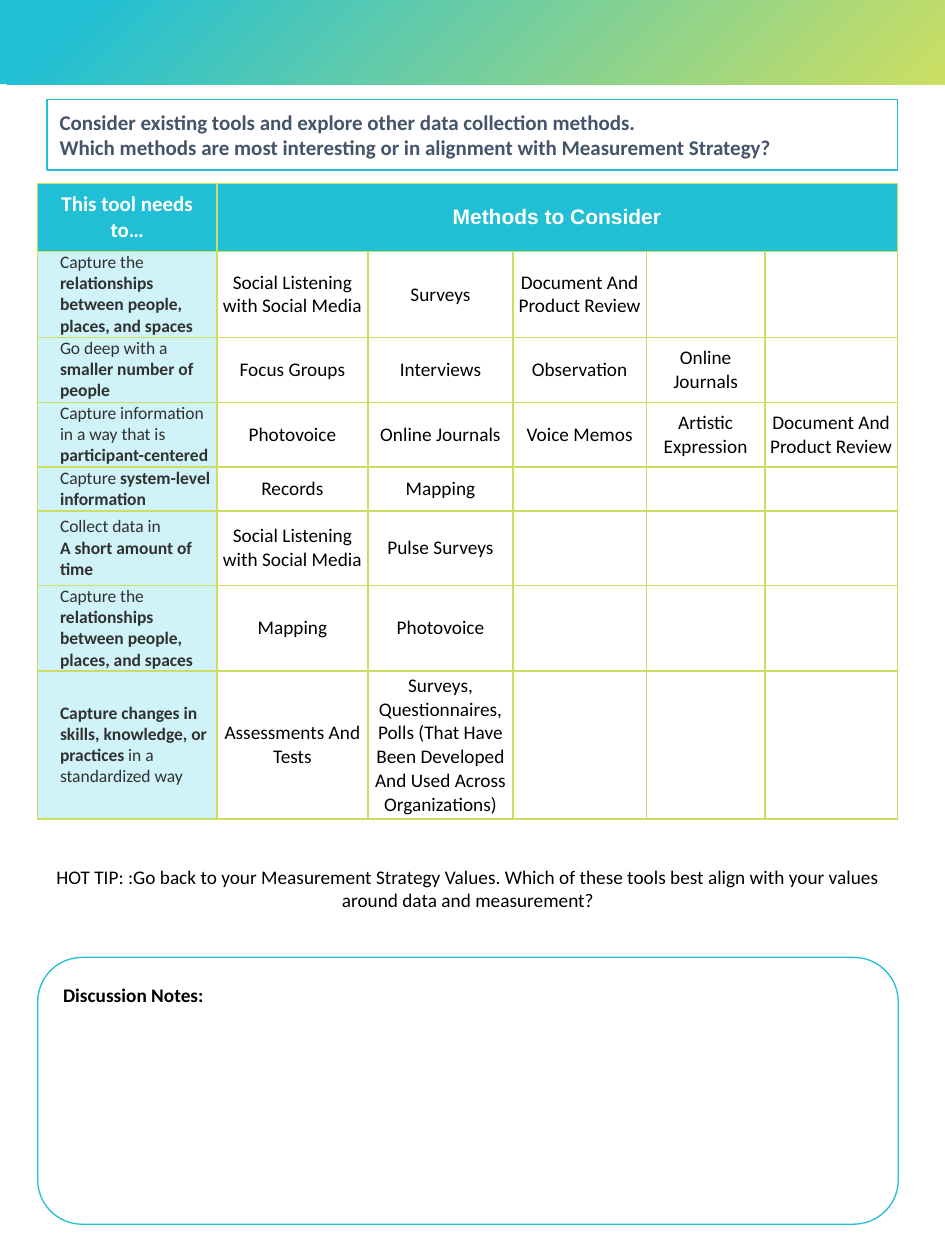
from lxml import etree
from pptx import Presentation
from pptx.dml.color import RGBColor
from pptx.enum.shapes import MSO_SHAPE
from pptx.enum.text import MSO_ANCHOR, MSO_AUTO_SIZE, PP_ALIGN
from pptx.oxml import parse_xml
from pptx.oxml.ns import nsdecls, qn
from pptx.util import Cm, Pt

LEFT, CENTER = PP_ALIGN.LEFT, PP_ALIGN.CENTER
TOP, MIDDLE = MSO_ANCHOR.TOP, MSO_ANCHOR.MIDDLE
NO_FIT = MSO_AUTO_SIZE.NONE
RECTANGLE, ROUNDED = MSO_SHAPE.RECTANGLE, MSO_SHAPE.ROUNDED_RECTANGLE
TITLE_ONLY = 5
TEAL, LIME, PALE = "20BFD6", "CCDE62", "CFF3F8"
SLATE, CHARCOAL, BLACK, WHITE = "44546A", "313131", "000000", "FFFFFF"

COLUMNS = [3.61, 3.05, 2.92, 2.69, 2.39, 2.67]
ROWS = [1.37, 1.73, 1.31, 1.3, 0.89, 1.5, 1.73, 2.98]
RELATIONSHIPS = [[("Capture the ", False),
                  ("relationships between people, places, and spaces", True)]]
SOCIAL = "Social Listening with Social Media"
REVIEW = "Document And Product Review"
METHODS = [
    (RELATIONSHIPS, [SOCIAL, "Surveys", REVIEW]),
    ([[("Go deep with a ", False), ("smaller number of people", True)]],
     ["Focus Groups", "Interviews", "Observation", "Online Journals"]),
    ([[("Capture information in a way that is ", False),
       ("participant-centered", True)]],
     ["Photovoice", "Online Journals", "Voice Memos", "Artistic Expression", REVIEW]),
    ([[("Capture", False), (" system-level information", True)]],
     ["Records", "Mapping"]),
    ([[("Collect data in", False)], [("A short amount of time", True)]],
     [SOCIAL, "Pulse Surveys"]),
    (RELATIONSHIPS, ["Mapping", "Photovoice"]),
    ([[("Capture changes in skills, knowledge, or practices ", True),
       ("in a standardized way", False)]],
     ["Assessments And Tests",
      "Surveys, Questionnaires, Polls (That Have Been Developed "
      "And Used Across Organizations)"]),
]


def color(value):
    return RGBColor.from_string(value)


def paint(target, value):
    target.fill.solid()
    target.fill.fore_color.rgb = color(value)


def set_margins(target, across, down):
    target.margin_left = target.margin_right = Cm(across)
    target.margin_top = target.margin_bottom = Cm(down)


def write(frame, paragraphs, size=11, font="Calibri", ink=BLACK, bold=False, align=LEFT):
    if isinstance(paragraphs, str):
        paragraphs = [[(line, bold)] for line in paragraphs.split("\n")]
    for number, spans in enumerate(paragraphs):
        para = frame.paragraphs[0] if number == 0 else frame.add_paragraph()
        para.alignment = align
        for text, strong in spans:
            span = para.add_run()
            span.text = text
            span.font.size = Pt(size)
            span.font.name = font
            span.font.bold = strong
            span.font.color.rgb = color(ink)


def outline(shape):
    shape.line.color.rgb = color(TEAL)
    shape.line.width = Pt(0.75)


def add_box(page, kind, left, top, width, height):
    shape = page.shapes.add_shape(kind, Cm(left), Cm(top), Cm(width), Cm(height))
    shape.shadow.inherit = False
    shape.line.fill.background()
    return shape


def add_banner(page, left, top, width, height):
    banner = add_box(page, RECTANGLE, left, top, width, height)
    banner.fill.gradient()
    banner.fill.gradient_angle = 315
    for stop, place, value in zip(banner.fill.gradient_stops, (0.08, 1), (TEAL, LIME)):
        stop.position = place
        stop.color.rgb = color(value)


def add_heading(page, left, top, width, height):
    title = page.shapes.title
    title.left, title.top, title.width, title.height = map(Cm, (left, top, width, height))
    title.element.spPr.append(parse_xml(
        f'<a:prstGeom {nsdecls("a")} prst="roundRect"><a:avLst>'
        '<a:gd name="adj" fmla="val 10300"/></a:avLst></a:prstGeom>'))
    title.fill.background()
    outline(title)
    frame = title.text_frame
    frame.auto_size, frame.word_wrap, frame.vertical_anchor = NO_FIT, True, MIDDLE
    set_margins(frame, 0.25, 0.13)
    write(frame, "Consider existing tools and explore other data collection methods.\n"
          "Which methods are most interesting or in alignment with Measurement Strategy?",
          size=12, ink=SLATE, bold=True)


def add_borders(cell):
    properties = cell._tc.get_or_add_tcPr()
    for place, side in enumerate(("lnL", "lnR", "lnT", "lnB")):
        border = etree.Element(qn(f"a:{side}"), w=str(Pt(1)))
        fill = etree.SubElement(border, qn("a:solidFill"))
        etree.SubElement(fill, qn("a:srgbClr"), val=LIME)
        properties.insert(place, border)


def add_methods_table(page, left, top):
    table = page.shapes.add_table(
        len(ROWS), len(COLUMNS), Cm(left), Cm(top), Cm(sum(COLUMNS)), Cm(sum(ROWS))).table
    table.horz_banding = False
    for column, width in zip(table.columns, COLUMNS):
        column.width = Cm(width)
    for row, height in zip(table.rows, ROWS):
        row.height = Cm(height)
    for cell in table.iter_cells():
        cell.vertical_anchor = MIDDLE
        set_margins(cell, 0.04, 0)
        paint(cell, WHITE)
        add_borders(cell)

    needs, methods = table.cell(0, 0), table.cell(0, 1)
    methods.merge(table.cell(0, len(COLUMNS) - 1))
    for cell, text, font in ((needs, "This tool needs to…", "Calibri"),
                             (methods, "Methods to Consider", "Arial")):
        paint(cell, TEAL)
        set_margins(cell, 0.2, 0.15)
        write(cell.text_frame, text, size=12, font=font, ink=WHITE, bold=True, align=CENTER)

    for row, (need, names) in enumerate(METHODS, start=1):
        label = table.cell(row, 0)
        paint(label, PALE)
        label.margin_left = Cm(0.45)
        write(label.text_frame, need, size=10, ink=CHARCOAL)
        for column, name in enumerate(names, start=1):
            write(table.cell(row, column).text_frame, name, align=CENTER)


def add_panel(page, left, top, width, height, text, anchor=TOP, bold=False, align=LEFT):
    panel = add_box(page, ROUNDED, left, top, width, height)
    panel.adjustments[0] = 0.167
    panel.fill.background()
    frame = panel.text_frame
    frame.word_wrap, frame.vertical_anchor = True, anchor
    set_margins(frame, 0.25, 0.25)
    write(frame, text, bold=bold, align=align)
    return panel


def main():
    deck = Presentation()
    deck.slide_width, deck.slide_height = Cm(19.05), Cm(25.4)
    page = deck.slides.add_slide(deck.slide_layouts[TITLE_ONLY])
    add_banner(page, 0, -0.05, 19.05, 1.75)
    add_heading(page, 0.95, 2.01, 17.15, 1.42)
    add_methods_table(page, 0.76, 3.7)
    tip = add_panel(page, 0.76, 16.92, 17.35, 1.98,
                    "HOT TIP: :Go back to your Measurement Strategy Values. Which of these "
                    "tools best align with your values around data and measurement?",
                    anchor=MIDDLE, align=CENTER)
    paint(tip, WHITE)
    notes = add_panel(page, 0.76, 19.3, 17.35, 5.38, "Discussion Notes:", bold=True)
    outline(notes)
    deck.save("out.pptx")


if __name__ == "__main__":
    main()
